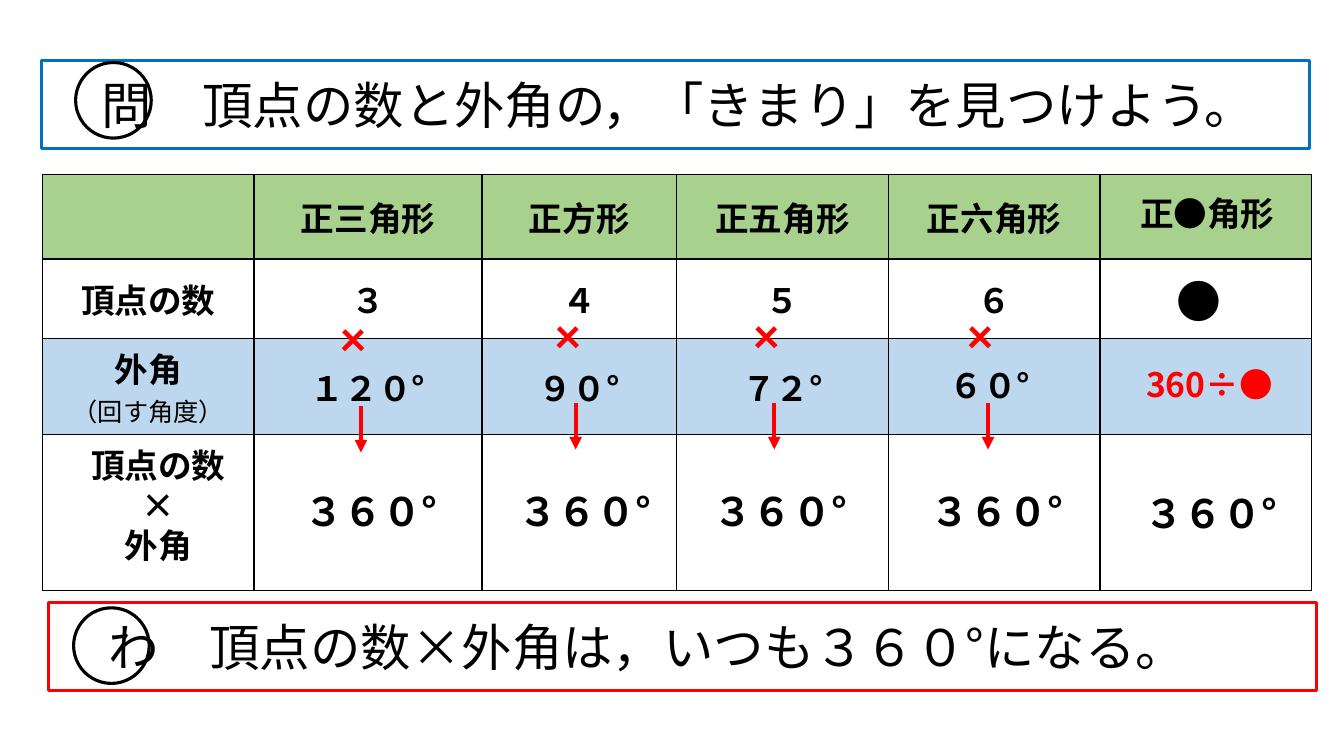
from pptx import Presentation
from pptx import util as u
from pptx.dml.color import RGBColor
from pptx.enum import shapes, text
from pptx.oxml.ns import qn
from lxml import etree

PX = 9144  # 100 px to the inch
BLACK = RGBColor(0x00, 0x00, 0x00)
WHITE = RGBColor(0xFF, 0xFF, 0xFF)
RED = RGBColor(0xFF, 0x00, 0x00)
BLUE = RGBColor(0x00, 0x70, 0xC0)
GREEN = RGBColor(0xA9, 0xD1, 0x8E)
PALE_BLUE = RGBColor(0xBD, 0xD7, 0xEE)
GOTHIC = "Noto Sans CJK JP"
CENTER, LEFT = text.PP_ALIGN.CENTER, text.PP_ALIGN.LEFT


def write(tf, lines, size=24, color=BLACK, bold=True, align=CENTER, font=GOTHIC):
    """Fill a text frame, one paragraph a line."""
    for i, line in enumerate(lines):
        p = tf.add_paragraph() if i else tf.paragraphs[0]
        p.alignment = align
        r = p.add_run()
        r.text = line
        for name, value in {"size": u.Pt(size), "bold": bold, "name": font}.items():
            setattr(r.font, name, value)
        r.font.color.rgb = color
        ea = etree.SubElement(r.font._element, qn("a:ea"))
        ea.set("typeface", font)


def add_label(parent, box, lines, **fmt):
    """Add a text box that grows with its text."""
    sp = parent.add_textbox(*[v * PX for v in box])
    sp.text_frame.word_wrap = True
    sp.text_frame.auto_size = text.MSO_AUTO_SIZE.SHAPE_TO_FIT_TEXT
    write(sp.text_frame, lines, **fmt)


prs = Presentation()
prs.slide_width, prs.slide_height = 1333 * PX, 750 * PX
s = prs.slides.add_slide(prs.slide_layouts[6])

# Table of polygons
cols = [210, 226, 193, 210, 210, 210]
rows = [84, 79, 95, 155]
fills = [GREEN, WHITE, PALE_BLUE, WHITE]
values = [
    ["", "正三角形", "正方形", "正五角形", "正六角形", ""],
    ["頂点の数", "３", "４", "５", "６", ""],
    ["外角", "１２０°", "９０°", "７２°", "", ""],
    [""] * 6,
]
tbl = s.shapes.add_table(4, 6, 42 * PX, 173 * PX, sum(cols) * PX, sum(rows) * PX).table
tbl.first_row = tbl.horz_banding = False
for col, width in zip(tbl.columns, cols):
    col.width = width * PX
for row, height, fill, line in zip(tbl.rows, rows, fills, values):
    row.height = height * PX
    for cell, value in zip(row.cells, line):
        cell.vertical_anchor = text.MSO_ANCHOR.MIDDLE
        if value:
            write(cell.text_frame, [value])
        # Borders come before the fill in the cell properties
        tcPr = cell._tc.get_or_add_tcPr()
        for side in ("a:lnL", "a:lnR", "a:lnT", "a:lnB"):
            ln = etree.SubElement(tcPr, qn(side), w=str(u.Pt(1)))
            solid = etree.SubElement(ln, qn("a:solidFill"))
            etree.SubElement(solid, qn("a:srgbClr"), val=str(BLACK))
        cell.fill.solid()
        cell.fill.fore_color.rgb = fill

# Smaller second line under the exterior angle heading
tf = tbl.cell(2, 0).text_frame
p = tf.add_paragraph()
p.alignment = CENTER
r = p.add_run()
r.text = "（回す角度）"
for name, value in {"size": u.Pt(18), "bold": False, "name": GOTHIC}.items():
    setattr(r.font, name, value)
r.font.color.rgb = BLACK
etree.SubElement(r.font._element, qn("a:ea")).set("typeface", GOTHIC)

# Labels laid over the table
add_label(s.shapes, (876, 357, 212, 50), ["６０°"])
add_label(s.shapes, (51, 436, 212, 131), ["頂点の数", "×", "外角"])
add_label(s.shapes, (1094, 186, 207, 50), ["正●角形"])
add_label(s.shapes, (1086, 267, 207, 64), ["●"], size=32)
add_label(s.shapes, (1096, 356, 207, 50), ["360÷●"], color=RED)
for x, y in [(262, 479), (474, 479), (668, 479), (883, 479), (1095, 481)]:
    add_label(s.shapes, (x, y, 212, 57), ["３６０°"], size=28)

# Question and summary banners, each with a ringed first character
banners = [
    (s.shapes, (41, 60), (75, 62), BLUE,
     "　問　頂点の数と外角の，「きまり」を見つけよう。"),
    (s.shapes.add_group_shape().shapes, (48, 598), (73, 603), RED,
     "　わ　頂点の数×外角は，いつも３６０°になる。"),
]
for parent, frame, ring, color, sentence in banners:
    for kind, (x, y), (w, h), edge in [
        (shapes.MSO_SHAPE.RECTANGLE, frame, (1258, 87), color),
        (shapes.MSO_SHAPE.OVAL, ring, (75, 75), BLACK),
    ]:
        sp = parent.add_shape(kind, x * PX, y * PX, w * PX, h * PX)
        sp.shadow.inherit = False
        sp.fill.background()
        sp.line.color.rgb = edge
        sp.line.width = u.Pt(2.25)
        if kind == shapes.MSO_SHAPE.RECTANGLE:
            sp.text_frame.word_wrap = True
            sp.text_frame.vertical_anchor = text.MSO_ANCHOR.MIDDLE
            write(sp.text_frame, [sentence], size=36, bold=False, align=LEFT)

# Multiplication sign and arrow down each polygon column
for x, y in [(328, 299), (541, 296), (738, 296), (950, 296)]:
    mark = s.shapes.add_group_shape().shapes
    add_label(mark, (x, y, 87, 71), ["×"], size=36, color=RED, align=LEFT, font="Calibri")
    arrow = mark.add_connector(shapes.MSO_CONNECTOR.STRAIGHT, (x + 30) * PX,
                               (y + 104) * PX, (x + 30) * PX, (y + 150) * PX)
    arrow.line.color.rgb = RED
    arrow.line.width = u.Pt(3)
    etree.SubElement(arrow.line._get_or_add_ln(), qn("a:tailEnd"), type="triangle")
    etree.SubElement(arrow._element.spPr, qn("a:effectLst"))

prs.save("out.pptx")
